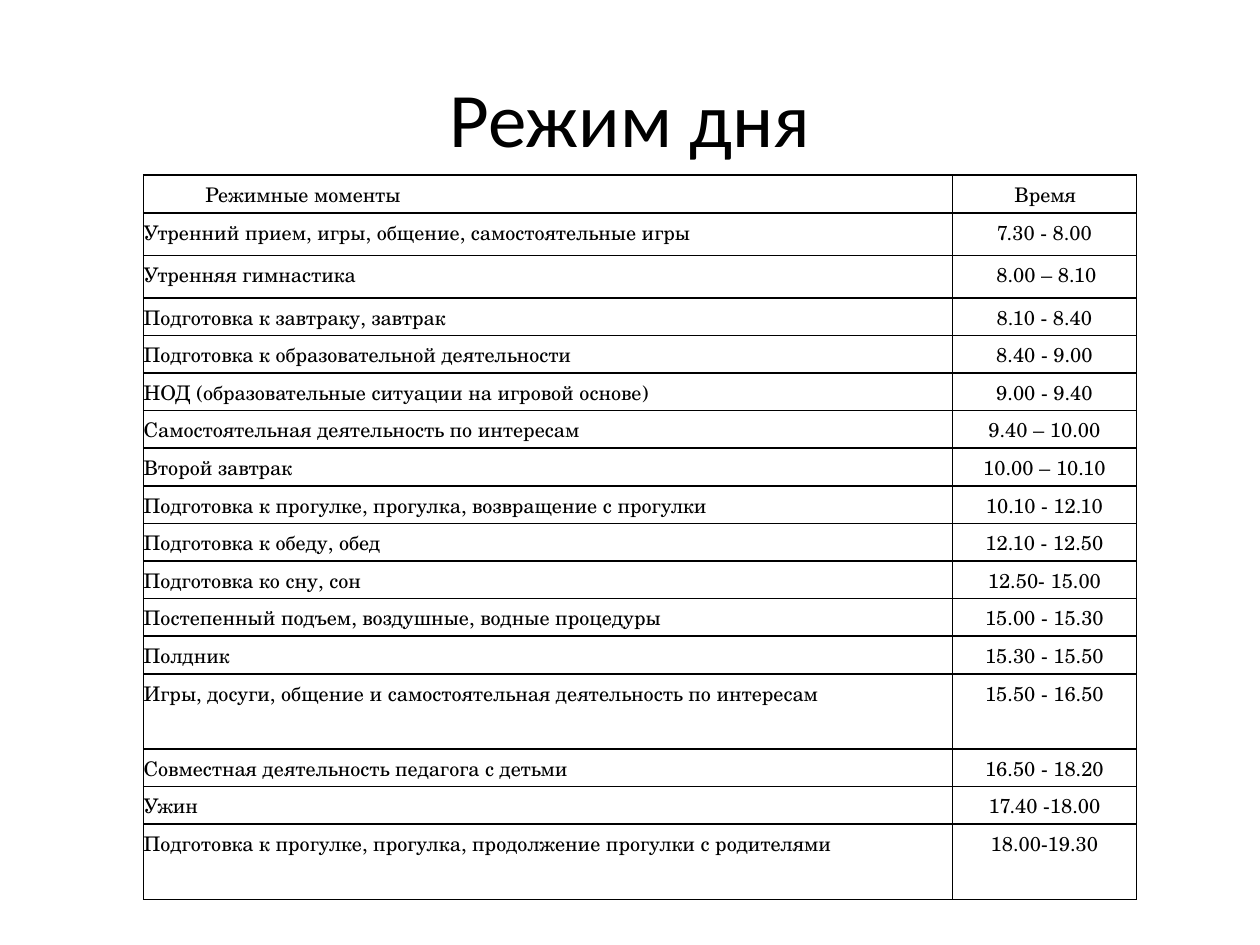
from pptx import Presentation
from pptx.dml.color import RGBColor
from pptx.enum.text import MSO_ANCHOR, PP_ALIGN
from pptx.oxml.ns import qn
from pptx.util import Pt
from lxml import etree

CENTER, JUSTIFY = PP_ALIGN.CENTER, PP_ALIGN.JUSTIFY
MIDDLE = MSO_ANCHOR.MIDDLE

TITLE = "Режим дня"
HEAD = ("Режимные моменты", "Время")
PLAN = [
    ("Утренний прием, игры, общение, самостоятельные игры", "7.30 - 8.00"),
    ("Утренняя гимнастика", "8.00 – 8.10"),
    ("Подготовка к завтраку, завтрак", "8.10 - 8.40"),
    ("Подготовка к образовательной деятельности", "8.40 - 9.00"),
    ("НОД (образовательные ситуации на игровой основе)", "9.00 - 9.40"),
    ("Самостоятельная деятельность по интересам", "9.40 – 10.00"),
    ("Второй завтрак", "10.00 – 10.10"),
    ("Подготовка к прогулке, прогулка, возвращение с прогулки", "10.10 - 12.10"),
    ("Подготовка к обеду, обед", "12.10 - 12.50"),
    ("Подготовка ко сну, сон", "12.50- 15.00"),
    ("Постепенный подъем, воздушные, водные процедуры", "15.00 - 15.30"),
    ("Полдник", "15.30 - 15.50"),
    ("Игры, досуги, общение и самостоятельная деятельность по интересам", "15.50 - 16.50"),
    ("Совместная деятельность педагога с детьми", "16.50 - 18.20"),
    ("Ужин", "17.40 -18.00"),
    ("Подготовка к прогулке, прогулка, продолжение прогулки с родителями", "18.00-19.30"),
]
ROWS = [HEAD] + PLAN

THEME = {
    "ink": "000000", "paper": "FFFFFF",
    "title": ("Calibri", 44), "body": ("TeX Gyre Schola", 11.5),
    "line": 1, "lead": 1.15,
}
LEFT, TOP = 82.1, 100.1
COLS = (462.2, 105.1)
ROW = 21.5
TALL = {1: 24.3, 2: 24.3, 13: 2 * ROW, 16: 2 * ROW}
HEIGHTS = [TALL.get(i, ROW) for i in range(len(ROWS))]
INDENT = 35.3
MARGINS = {(2, 1): 2.2}


def style(para, kind):
    name, size = THEME[kind]
    for run in para.runs:
        run.font.name = name
        run.font.size = Pt(size)
        run.font.color.rgb = RGBColor.from_string(THEME["ink"])


def frame(cell):
    props = cell._tc.get_or_add_tcPr()
    for side in ("a:lnL", "a:lnR", "a:lnT", "a:lnB"):
        line = etree.SubElement(props, qn(side), w=str(Pt(THEME["line"])))
        fill = etree.SubElement(line, qn("a:solidFill"))
        etree.SubElement(fill, qn("a:srgbClr"), val=THEME["ink"])


def fill_cell(cell, text, row, col):
    cell.margin_left = cell.margin_right = 0
    cell.margin_top = cell.margin_bottom = 0
    frame(cell)
    cell.fill.solid()
    cell.fill.fore_color.rgb = RGBColor.from_string(THEME["paper"])
    para = cell.text_frame.paragraphs[0]
    para.text = text
    para.alignment = CENTER if row and col else JUSTIFY
    para.line_spacing = THEME["lead"]
    props = para._p.get_or_add_pPr()
    props.set("marL", str(Pt(MARGINS.get((row, col), 0))))
    props.set("indent", str(Pt(0 if row else INDENT)))
    style(para, "body")


def add_title(slide):
    box = slide.shapes.add_textbox(Pt(36), Pt(21.6), Pt(648), Pt(90))
    text = box.text_frame
    text.word_wrap = True
    text.vertical_anchor = MIDDLE
    text.text = TITLE
    para = text.paragraphs[0]
    para.alignment = CENTER
    style(para, "title")


def add_plan(slide):
    table = slide.shapes.add_table(
        len(ROWS), len(COLS), Pt(LEFT), Pt(TOP), Pt(sum(COLS)), Pt(sum(HEIGHTS))
    ).table
    table.first_row = table.horz_banding = False
    for col, width in enumerate(COLS):
        table.columns[col].width = Pt(width)
    for row, (height, texts) in enumerate(zip(HEIGHTS, ROWS)):
        table.rows[row].height = Pt(height)
        for col, text in enumerate(texts):
            fill_cell(table.cell(row, col), text, row, col)


def main():
    deck = Presentation()
    deck.slide_width, deck.slide_height = Pt(720), Pt(540)
    slide = deck.slides.add_slide(deck.slide_layouts[6])
    add_title(slide)
    add_plan(slide)
    deck.save("out.pptx")


if __name__ == "__main__":
    main()
